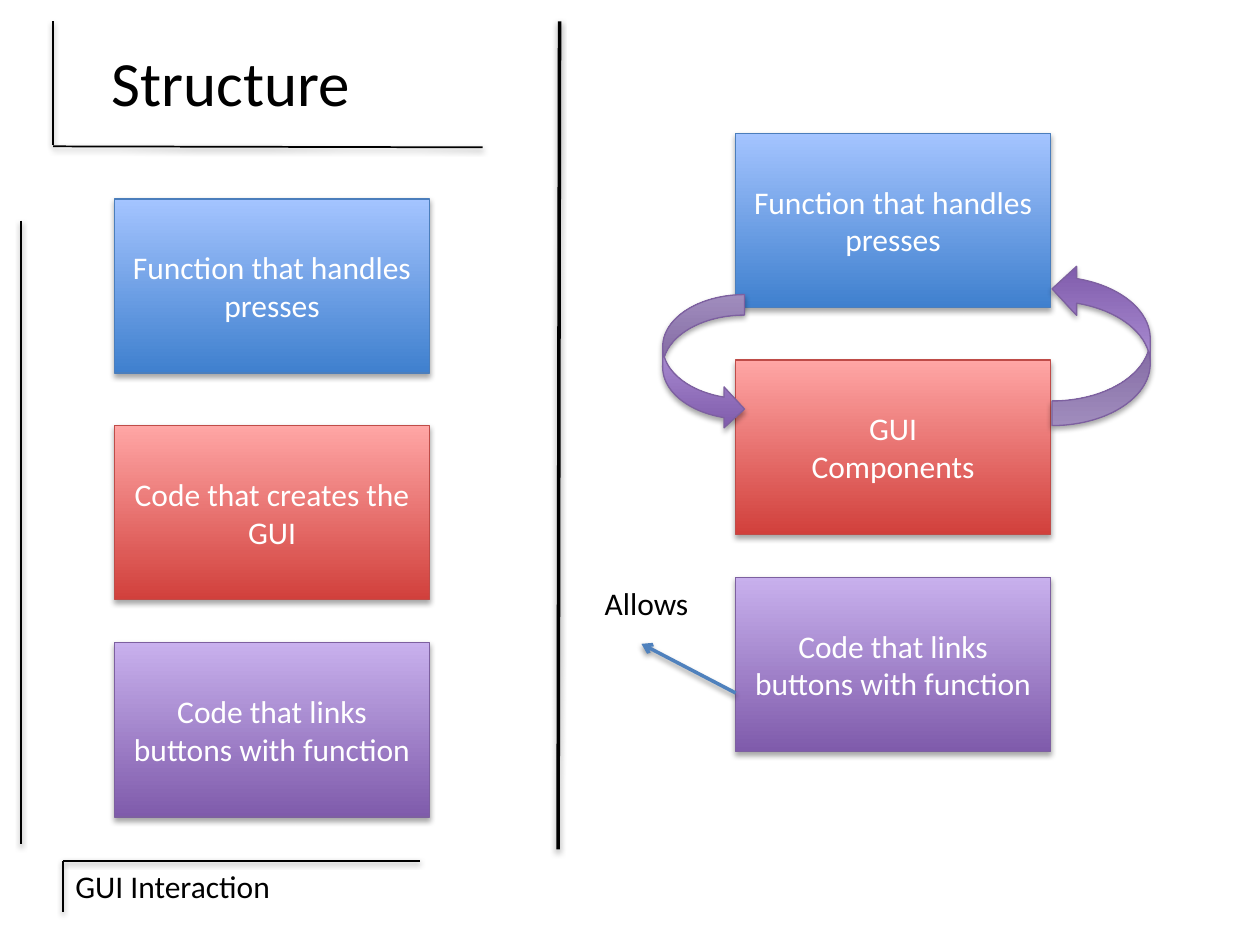
from lxml.etree import SubElement
from pptx import Presentation
from pptx.dml.color import RGBColor
from pptx.enum.shapes import MSO_CONNECTOR, MSO_SHAPE
from pptx.enum.text import MSO_ANCHOR, PP_ALIGN
from pptx.oxml import parse_xml
from pptx.oxml.ns import nsdecls, qn
from pptx.util import Cm, Pt

BLACK, WHITE, ACCENT = "000000", "FFFFFF", "4F81BD"
BLUE = ("3F80CE", "A4C4FF", "4B7EBC")
RED = ("D1403C", "FFA6A5", "BF4C48")
PURPLE = ("7F5BAB", "C8B0ED", "7D60A0")
HANDLER = "Function that handles\npresses"
LINKER = "Code that links buttons with function"
BLOCK_WIDTH, BLOCK_HEIGHT = 6.35, 3.51
BLOCK_OFFSETS = (0, 4.57, 8.95)


def color(value):
    return RGBColor.from_string(value)


def apply_format(target, values):
    for name, value in values.items():
        setattr(target, name, value)


def add_shadow(part, opacity, distance):
    properties = part._element.spPr
    for old in properties.findall(qn("a:effectLst")):
        properties.remove(old)
    properties.append(parse_xml(
        f'<a:effectLst {nsdecls("a")}><a:outerShdw blurRad="40000" dist="{distance}" '
        f'dir="5400000" rotWithShape="0"><a:srgbClr val="{BLACK}">'
        f'<a:alpha val="{opacity}000"/></a:srgbClr></a:outerShdw></a:effectLst>'))


def write(frame, words, size, ink, align, **frame_format):
    frame.text = words
    apply_format(frame, {"word_wrap": True, **frame_format})
    for paragraph in frame.paragraphs:
        paragraph.alignment = align
        apply_format(paragraph.font, {"name": "Calibri", "size": Pt(size)})
        paragraph.font.color.rgb = color(ink)


def add_label(slide, left, top, width, height, words, size=18,
              align=PP_ALIGN.LEFT, **frame_format):
    label = slide.shapes.add_textbox(Cm(left), Cm(top), Cm(width), Cm(height))
    write(label.text_frame, words, size, BLACK, align, **frame_format)


def add_rule(slide, start, end, width=1, ink=BLACK):
    rule = slide.shapes.add_connector(
        MSO_CONNECTOR.STRAIGHT, *(Cm(value) for value in (*start, *end)))
    rule.line.color.rgb = color(ink)
    rule.line.width = Pt(width)
    add_shadow(rule, 38, 20000)
    return rule


def add_solid(slide, preset, left, top, width, height, palette):
    dark, light, edge = palette
    solid = slide.shapes.add_shape(preset, Cm(left), Cm(top), Cm(width), Cm(height))
    solid.shadow.inherit = False
    solid.fill.gradient()
    solid.fill.gradient_angle = 90
    for stop, shade in zip(solid.fill.gradient_stops, (dark, light)):
        stop.color.rgb = color(shade)
    solid.line.color.rgb = color(edge)
    solid.line.width = Pt(0.75)
    add_shadow(solid, 35, 23000)
    return solid


def add_heading(slide, left, top):
    add_rule(slide, (left + 8.66, top + 2.54), (left, top + 2.52))
    add_rule(slide, (left, top), (left, top + 2.49))
    add_label(slide, left + 0.2, top, 6.78, 2.41, "Structure", 36,
              PP_ALIGN.CENTER, vertical_anchor=MSO_ANCHOR.MIDDLE)


def add_footer(slide, left, top):
    add_rule(slide, (left + 7.19, top), (left, top))
    add_label(slide, left, top, 6.15, 1.02, "GUI Interaction")
    add_rule(slide, (left, top), (left, top + 1.04))


def add_blocks(slide, left, top, gui_words):
    blocks = ((HANDLER, BLUE), (gui_words, RED), (LINKER, PURPLE))
    for offset, (words, palette) in zip(BLOCK_OFFSETS, blocks):
        block = add_solid(slide, MSO_SHAPE.RECTANGLE, left, top + offset,
                          BLOCK_WIDTH, BLOCK_HEIGHT, palette)
        write(block.text_frame, words, 18, WHITE, PP_ALIGN.CENTER,
              vertical_anchor=MSO_ANCHOR.MIDDLE)


def add_interaction(slide, left, top):
    add_blocks(slide, left, top, "GUI\nComponents")
    allows = add_rule(slide, (left, top + 11.28), (left - 1.9, top + 10.29), 2, ACCENT)
    SubElement(allows.line._get_or_add_ln(), qn("a:tailEnd"), type="arrow")
    add_label(slide, left - 2.89, top + BLOCK_OFFSETS[2], 2.24, 1.02, "Allows",
              word_wrap=False)
    upward = add_solid(slide, MSO_SHAPE.CURVED_RIGHT_ARROW,
                       left + 6.38, top + 2.64, 1.98, 3.25, PURPLE)
    for flip in ("flipH", "flipV"):
        upward._element.spPr.xfrm.set(flip, "1")
    add_solid(slide, MSO_SHAPE.CURVED_RIGHT_ARROW,
              left - 1.47, top + 3.25, 1.65, 2.72, PURPLE)


def main():
    deck = Presentation()
    apply_format(deck, {"slide_width": Cm(25.4), "slide_height": Cm(19.05)})
    slide = deck.slides.add_slide(deck.slide_layouts[6])
    add_footer(slide, 1.27, 17.35)
    add_rule(slide, (0.43, 4.45), (0.43, 17.02))
    add_heading(slide, 1.07, 0.43)
    add_blocks(slide, 2.31, 4.01, "Code that creates the GUI")
    add_rule(slide, (11.28, 0.43), (11.25, 17.12), 2)
    add_interaction(slide, 14.83, 2.69)
    deck.save("out.pptx")


if __name__ == "__main__":
    main()
